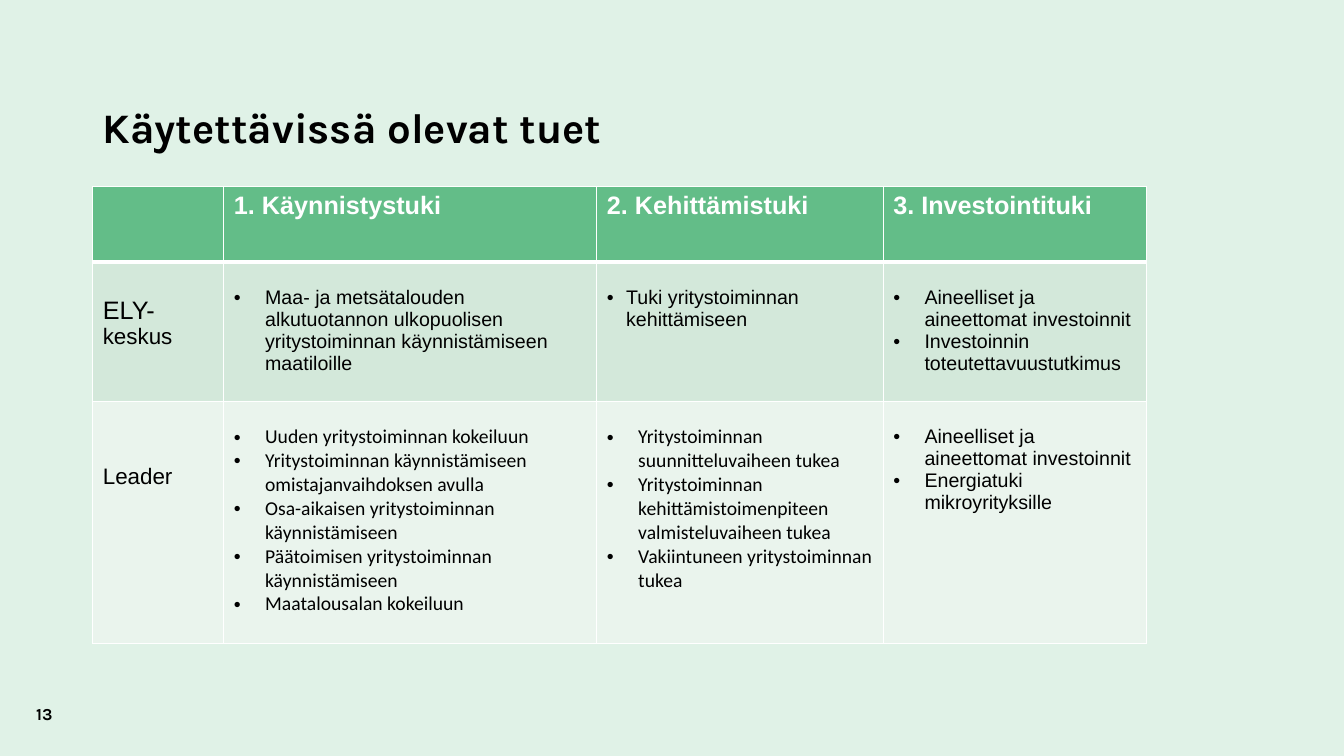
import pptx
import pptx.dml.color
import pptx.enum.text
import pptx.oxml
import pptx.oxml.ns
import pptx.util

Inches, Pt = pptx.util.Inches, pptx.util.Pt
RGBColor = pptx.dml.color.RGBColor
ANCHOR = pptx.enum.text.MSO_ANCHOR

MINT = RGBColor(0xE0, 0xF2, 0xE7)
GREEN = RGBColor(0x63, 0xBD, 0x88)
BAND = RGBColor(0xD3, 0xE8, 0xDA)
PALE = RGBColor(0xEA, 0xF4, 0xED)
WHITE = RGBColor(0xFF, 0xFF, 0xFF)
BLACK = RGBColor(0, 0, 0)

HEAD = {"size": Pt(18), "name": "Arial", "bold": True}
LABEL = {"size": Pt(16), "name": "Arial", "bold": False}
LABEL_BIG = {**LABEL, "size": Pt(18)}
ARIAL = {"size": Pt(14), "name": "Arial", "bold": False}
CALIBRI = {**ARIAL, "name": "Calibri"}

COLUMNS = [1.3, 3.7, 2.84, 2.61]
ROWS = [0.75, 1.38, 2.4]
HEADERS = ["1. Käynnistystuki", "2. Kehittämistuki", "3. Investointituki"]

# Each body row: fill, label top margin, label runs, then (bullets, format, indent) per column
BODY = [
    (BAND, 0.34, [("ELY-", LABEL_BIG), ("keskus", LABEL)], [
        (["Maa- ja metsätalouden alkutuotannon ulkopuolisen yritystoiminnan "
          "käynnistämiseen maatiloille"], ARIAL, 0.31),
        (["Tuki yritystoiminnan kehittämiseen"], ARIAL, 0.19),
        (["Aineelliset ja aineettomat investoinnit",
          "Investoinnin toteutettavuustutkimus"], ARIAL, 0.31),
    ]),
    (PALE, 0.63, [("Leader", LABEL)], [
        (["Uuden yritystoiminnan kokeiluun",
          "Yritystoiminnan käynnistämiseen omistajanvaihdoksen avulla",
          "Osa-aikaisen yritystoiminnan käynnistämiseen",
          "Päätoimisen yritystoiminnan käynnistämiseen",
          "Maatalousalan kokeiluun"], CALIBRI, 0.31),
        (["Yritystoiminnan suunnitteluvaiheen tukea",
          "Yritystoiminnan kehittämistoimenpiteen valmisteluvaiheen tukea",
          "Vakiintuneen yritystoiminnan tukea"], CALIBRI, 0.31),
        (["Aineelliset ja aineettomat investoinnit",
          "Energiatuki mikroyrityksille"], ARIAL, 0.31),
    ]),
]


class SlideBuilder:
    def __init__(self, prs):
        self.s = prs.slides.add_slide(prs.slide_layouts[6])
        self.s.background.fill.solid()
        self.s.background.fill.fore_color.rgb = MINT

    def run(self, p, text, fmt, color=BLACK):
        r = p.add_run()
        r.text = text
        for key, value in fmt.items():
            setattr(r.font, key, value)
        r.font.color.rgb = color

    def text(self, x, y, w, h, text, size, anchor=ANCHOR.TOP):
        sp = self.s.shapes.add_textbox(Inches(x), Inches(y), Inches(w), Inches(h))
        tf = sp.text_frame
        tf.word_wrap = True
        tf.vertical_anchor = anchor
        self.run(tf.paragraphs[0], text, {"size": Pt(size), "name": "Karla", "bold": True})
        return tf.paragraphs[0]

    def table(self, x, y, columns, rows):
        frame = self.s.shapes.add_table(len(rows), len(columns), Inches(x), Inches(y),
                                        Inches(sum(columns)), Inches(sum(rows)))
        for col, width in zip(frame.table.columns, columns):
            col.width = Inches(width)
        for row, height in zip(frame.table.rows, rows):
            row.height = Inches(height)
        return frame.table

    def cell(self, cell, fill, top=0.05, heavy=""):
        """Fill and border a cell; the side named by heavy gets a thick line."""
        tcPr = cell._tc.get_or_add_tcPr()
        for side in "LRTB":
            width = Pt(3 if side == heavy else 1)
            tcPr.append(pptx.oxml.parse_xml(
                f'<a:ln{side} {pptx.oxml.ns.nsdecls("a")} w="{width}"><a:solidFill>'
                f'<a:srgbClr val="{WHITE}"/></a:solidFill></a:ln{side}>'))
        cell.fill.solid()
        cell.fill.fore_color.rgb = fill
        cell.margin_top = Inches(top)
        return cell.text_frame

    def bullets(self, tf, items, fmt, indent):
        for i, item in enumerate(items):
            p = tf.add_paragraph() if i else tf.paragraphs[0]
            pPr = p._p.get_or_add_pPr()
            pPr.set("marL", str(Inches(indent)))
            pPr.set("indent", str(-Inches(indent)))
            for tag in ('buFont typeface="Arial"', 'buChar char="•"'):
                pPr.append(pptx.oxml.parse_xml(f'<a:{tag} {pptx.oxml.ns.nsdecls("a")}/>'))
            self.run(p, item, fmt)


def main():
    prs = pptx.Presentation()
    prs.slide_width, prs.slide_height = Inches(13.33), Inches(7.5)
    b = SlideBuilder(prs)
    b.text(0.26, 6.93, 0.87, 0.3, "13", 12)
    title = b.text(0.92, 0.86, 11.63, 0.86, "Käytettävissä olevat tuet", 30, ANCHOR.MIDDLE)
    title.line_spacing = 0.9

    tbl = b.table(0.92, 1.85, COLUMNS, ROWS)
    b.cell(tbl.cell(0, 0), GREEN, heavy="B")
    for c, header in enumerate(HEADERS, 1):
        tf = b.cell(tbl.cell(0, c), GREEN, heavy="B")
        b.run(tf.paragraphs[0], header, HEAD, WHITE)
    for r, (fill, label_top, label, columns) in enumerate(BODY, 1):
        heavy = "T" if r == 1 else ""
        tf = b.cell(tbl.cell(r, 0), fill, label_top, heavy)
        for text, fmt in label:
            b.run(tf.paragraphs[0], text, fmt)
        for c, (items, fmt, indent) in enumerate(columns, 1):
            b.bullets(b.cell(tbl.cell(r, c), fill, 0.24, heavy), items, fmt, indent)
    prs.save("out.pptx")


if __name__ == "__main__":
    main()
